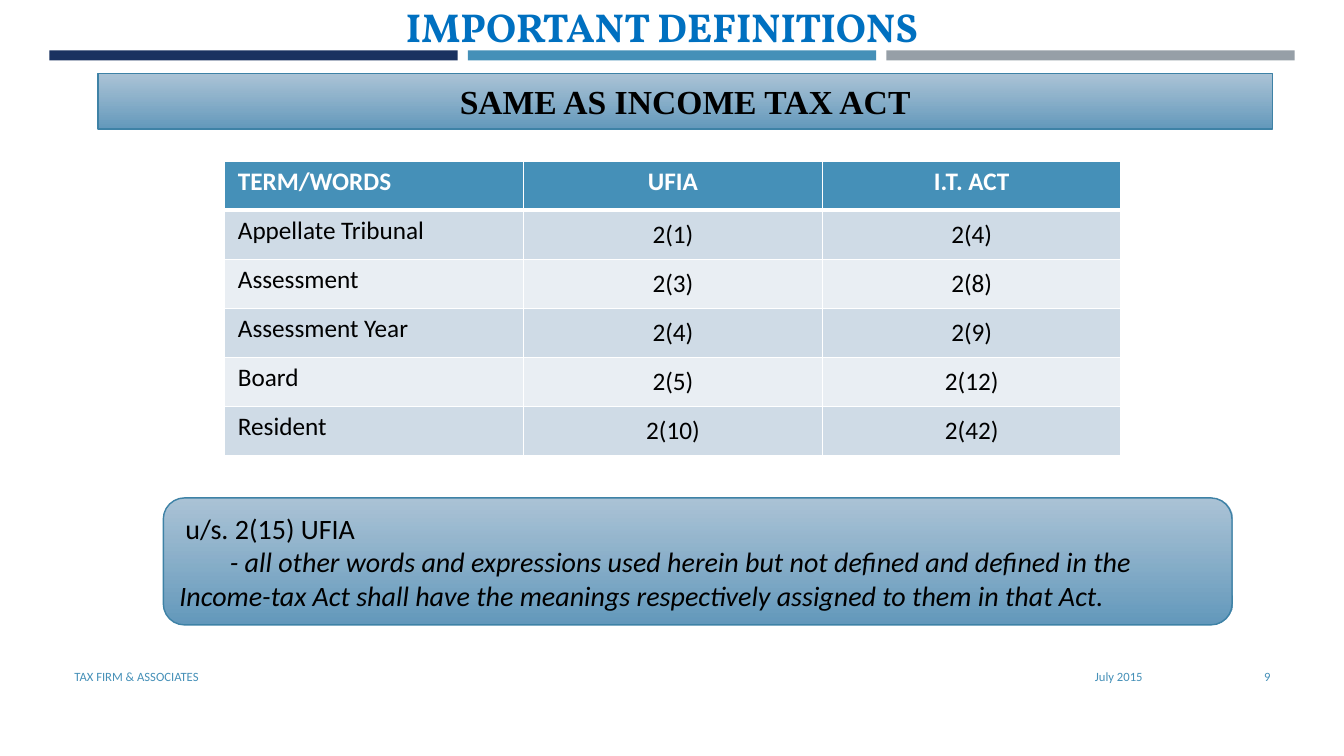
"""Build the slide of definitions shared with the Income Tax Act."""
from dataclasses import dataclass, field

from lxml import etree
from pptx import Presentation
from pptx.dml.color import RGBColor
from pptx.enum.shapes import MSO_SHAPE
from pptx.enum.text import MSO_ANCHOR, PP_ALIGN
from pptx.oxml.ns import qn
from pptx.util import Inches, Pt

RECT, ROUNDED = MSO_SHAPE.RECTANGLE, MSO_SHAPE.ROUNDED_RECTANGLE
TOP, MIDDLE, BOTTOM = MSO_ANCHOR.TOP, MSO_ANCHOR.MIDDLE, MSO_ANCHOR.BOTTOM
LEFT, CENTER, RIGHT, JUSTIFY = PP_ALIGN.LEFT, PP_ALIGN.CENTER, PP_ALIGN.RIGHT, PP_ALIGN.JUSTIFY

NAVY = RGBColor(0x1A, 0x32, 0x60)
BLUE = RGBColor(0x45, 0x90, 0xB8)
GREY = RGBColor(0x96, 0x9F, 0xA7)
TITLE_BLUE = RGBColor(0x00, 0x70, 0xC0)
PANEL_TOP = RGBColor(0xA2, 0xBD, 0xD2)
PANEL_BOTTOM = RGBColor(0x63, 0x99, 0xBC)
PANEL_LINE = RGBColor(0x3E, 0x82, 0xA6)
BAND_DARK = RGBColor(0xCF, 0xDB, 0xE6)
BAND_LIGHT = RGBColor(0xE9, 0xEE, 0xF3)
WHITE = RGBColor(0xFF, 0xFF, 0xFF)
BLACK = RGBColor(0x00, 0x00, 0x00)

BAR_LEFT, BAR_STEP = 0.49, 4.15
COL_WIDTH, ROW_HEIGHT = 2.963, 0.486
ROWS = [
    ("TERM/WORDS", "UFIA", "I.T. ACT"),
    ("Appellate Tribunal", "2(1)", "2(4)"),
    ("Assessment", "2(3)", "2(8)"),
    ("Assessment Year", "2(4)", "2(9)"),
    ("Board", "2(5)", "2(12)"),
    ("Resident", "2(10)", "2(42)"),
]


@dataclass
class Para:
    """A paragraph with its alignment, first-line indent and font values."""
    text: str
    align: PP_ALIGN = LEFT
    indent: float = 0
    size: float = 18
    color: RGBColor = BLACK
    font: dict = field(default_factory=dict)


@dataclass
class Panel:
    """A gradient box holding text."""
    kind: MSO_SHAPE
    box: tuple[float, float, float, float]
    paras: list[Para]


@dataclass
class Footer:
    """A small text at the foot of the slide."""
    text: str
    left: float
    width: float
    align: PP_ALIGN


BARS = [NAVY, BLUE, GREY]
PANELS = [
    Panel(RECT, (0.97, 0.73, 11.65, 0.55), [
        Para("SAME AS INCOME TAX ACT", CENTER, size=24,
             font={"name": "Times New Roman", "bold": True})]),
    Panel(ROUNDED, (1.62, 4.94, 10.6, 1.26), [
        Para("u/s. 2(15) UFIA", JUSTIFY, 0.06, 20),
        Para("- all other words and expressions used herein but not defined and defined "
             "in the Income-tax Act shall have the meanings respectively assigned to "
             "them in that Act.", LEFT, 0.5, 20, font={"italic": True})]),
]
FOOTERS = [
    Footer("TAX FIRM & ASSOCIATES", 0.64, 7.56, LEFT),
    Footer("July 2015", 8.32, 3.11, RIGHT),
    Footer("9", 11.55, 1.15, RIGHT),
]


def write(tf, paras: list[Para], anchor: MSO_ANCHOR) -> None:
    """Fill a text frame with formatted paragraphs."""
    tf.word_wrap = True
    tf.vertical_anchor = anchor
    for i, para in enumerate(paras):
        p = tf.paragraphs[0] if i == 0 else tf.add_paragraph()
        p.alignment = para.align
        if para.indent:
            p._p.get_or_add_pPr().set("indent", str(Inches(para.indent)))
        r = p.add_run()
        r.text = para.text
        values = {"name": "Calibri", "size": Pt(para.size), **para.font}
        for name, value in values.items():
            setattr(r.font, name, value)
        r.font.color.rgb = para.color


def add_bar(s, i: int, color: RGBColor) -> None:
    """Draw one of the bars under the title."""
    sp = s.shapes.add_shape(RECT, Inches(BAR_LEFT + i * BAR_STEP), Inches(0.5),
                            Inches(4.05), Inches(0.1))
    sp.shadow.inherit = False
    sp.fill.solid()
    sp.fill.fore_color.rgb = color
    sp.line.fill.background()


def add_panel(s, panel: Panel) -> None:
    """Draw a gradient box with its text."""
    sp = s.shapes.add_shape(panel.kind, *map(Inches, panel.box))
    sp.shadow.inherit = False
    sp.fill.gradient()
    sp.fill.gradient_angle = 270
    for stop, color, position in zip(sp.fill.gradient_stops, (PANEL_TOP, PANEL_BOTTOM), (0, 1)):
        stop.color.rgb = color
        stop.position = position
    first = next(sp._element.spPr.iter(qn("a:srgbClr")))
    etree.SubElement(first, qn("a:alpha"), val="90000")
    sp.line.color.rgb = PANEL_LINE
    sp.line.width = Pt(1)
    write(sp.text_frame, panel.paras, MIDDLE)


def set_borders(cell, bottom: float) -> None:
    """Give a cell white borders, placed ahead of its fill."""
    tc_pr = cell._tc.get_or_add_tcPr()
    widths = {"a:lnL": 1, "a:lnR": 1, "a:lnT": 1, "a:lnB": bottom}
    for i, (tag, width) in enumerate(widths.items()):
        ln = etree.Element(qn(tag), w=str(Pt(width)))
        fill = etree.SubElement(ln, qn("a:solidFill"))
        etree.SubElement(fill, qn("a:srgbClr"), val=str(WHITE))
        tc_pr.insert(i, ln)


def add_terms_table(s) -> None:
    """Draw the table of terms and section numbers."""
    cols = len(ROWS[0])
    table = s.shapes.add_table(len(ROWS), cols, Inches(2.23), Inches(1.6),
                               Inches(COL_WIDTH * cols),
                               Inches(ROW_HEIGHT * len(ROWS))).table
    for col in table.columns:
        col.width = Inches(COL_WIDTH)
    for i, row in enumerate(ROWS):
        table.rows[i].height = Inches(ROW_HEIGHT)
        header = i == 0
        band = BLUE if header else BAND_DARK if i % 2 else BAND_LIGHT
        for j, text in enumerate(row):
            cell = table.cell(i, j)
            cell.margin_left = cell.margin_right = Inches(0.13)
            cell.fill.solid()
            cell.fill.fore_color.rgb = band
            set_borders(cell, 3 if header else 1)
            write(cell.text_frame, [Para(text, CENTER if j else LEFT,
                                         color=WHITE if header else BLACK,
                                         font={"bold": header})], TOP)
            cell.vertical_anchor = MIDDLE if j and not header else TOP


def add_footer(s, footer: Footer) -> None:
    """Draw one footer text."""
    tb = s.shapes.add_textbox(Inches(footer.left), Inches(6.51),
                              Inches(footer.width), Inches(0.4))
    write(tb.text_frame, [Para(footer.text, footer.align, size=9, color=BLUE)], MIDDLE)


def main() -> None:
    """Build and save the slide."""
    prs = Presentation()
    prs.slide_width, prs.slide_height = Inches(13.33), Inches(7.5)
    s = prs.slides.add_slide(prs.slide_layouts[5])
    for i, color in enumerate(BARS):
        add_bar(s, i, color)
    title = s.shapes.title
    title.left, title.top, title.width, title.height = map(Inches, (0.9, 0, 11.33, 0.55))
    write(title.text_frame, [Para("IMPORTANT DEFINITIONS", CENTER, size=28.8, color=TITLE_BLUE,
                                  font={"name": "Vollkorn", "bold": True})], BOTTOM)
    for panel in PANELS:
        add_panel(s, panel)
    add_terms_table(s)
    for footer in FOOTERS:
        add_footer(s, footer)
    prs.save("out.pptx")


if __name__ == "__main__":
    main()
